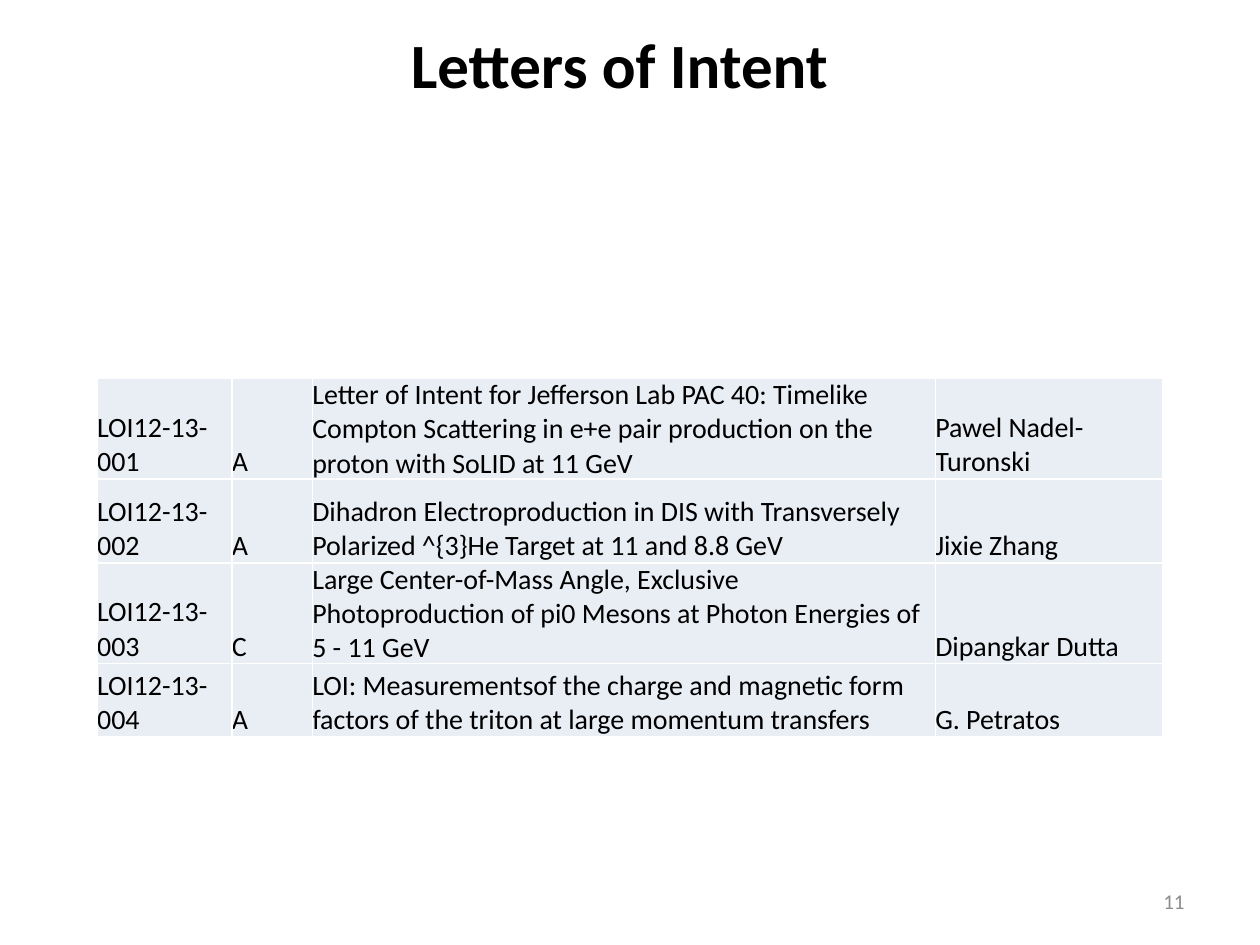
import pptx
import pptx.dml.color
import pptx.enum.text
import pptx.oxml
import pptx.oxml.ns
import pptx.util

Pt = pptx.util.Pt
Align = pptx.enum.text.PP_ALIGN
Anchor = pptx.enum.text.MSO_ANCHOR

COLORS = {"text": "000000", "number": "8C8C8C", "cell": "E9EDF4", "border": "FFFFFF"}

COLUMN_WIDTHS = [77, 46, 356, 130]
ROW_HEIGHTS = [49, 48, 38, 42]
LETTERS = [
    ("LOI12-13-001", "A",
     "Letter of Intent for Jefferson Lab PAC 40: Timelike Compton Scattering in e+e "
     "pair production on the proton with SoLID at 11 GeV", "Pawel Nadel-Turonski"),
    ("LOI12-13-002", "A",
     "Dihadron Electroproduction in DIS with Transversely Polarized ^{3}He Target "
     "at 11 and 8.8 GeV", "Jixie Zhang"),
    ("LOI12-13-003", "C",
     "Large Center-of-Mass Angle, Exclusive Photoproduction of pi0 Mesons at Photon "
     "Energies of 5 - 11 GeV", "Dipangkar Dutta"),
    ("LOI12-13-004", "A",
     "LOI: Measurementsof the charge and magnetic form factors of the triton at "
     "large momentum transfers", "G. Petratos"),
]


class SlideBuilder:
    """Draws styled elements on the current slide."""

    def __init__(self, slide, font_name="Calibri"):
        self.slide = slide
        self.font_name = font_name

    def color(self, name):
        return pptx.dml.color.RGBColor.from_string(COLORS[name])

    def format_text(self, text_frame, size, color="text", bold=False, align=Align.LEFT):
        for paragraph in text_frame.paragraphs:
            paragraph.alignment = align
            for run in paragraph.runs:
                run.font.name = self.font_name
                run.font.size = Pt(size)
                run.font.bold = bold
                run.font.color.rgb = self.color(color)

    def text(self, text, left, top, width, height, size, **style):
        shape = self.slide.shapes.add_textbox(Pt(left), Pt(top), Pt(width), Pt(height))
        text_frame = shape.text_frame
        text_frame.word_wrap = True
        text_frame.vertical_anchor = Anchor.MIDDLE
        text_frame.text = text
        self.format_text(text_frame, size, **style)

    def borders(self, cell, width):
        properties = cell._tc.get_or_add_tcPr()
        for position, side in enumerate(("lnL", "lnR", "lnT", "lnB")):
            line = pptx.oxml.parse_xml(
                f'<a:{side} {pptx.oxml.ns.nsdecls("a")} w="{Pt(width)}"><a:solidFill>'
                f'<a:srgbClr val="{COLORS["border"]}"/></a:solidFill></a:{side}>')
            properties.insert(position, line)

    def table(self, rows, left, top, widths, heights, size):
        shape = self.slide.shapes.add_table(
            len(rows), len(widths), Pt(left), Pt(top), Pt(sum(widths)), Pt(sum(heights)))
        table = shape.table
        table.first_row = False
        table.horz_banding = False
        for column, width in zip(table.columns, widths):
            column.width = Pt(width)
        for row, height, values in zip(table.rows, heights, rows):
            row.height = Pt(height)
            for cell, value in zip(row.cells, values):
                cell.text_frame.text = value
                cell.vertical_anchor = Anchor.BOTTOM
                cell.margin_left = cell.margin_right = 0
                cell.margin_top = cell.margin_bottom = 0
                cell.fill.solid()
                cell.fill.fore_color.rgb = self.color("cell")
                self.borders(cell, 1)
                self.format_text(cell.text_frame, size)


def main():
    presentation = pptx.Presentation()
    presentation.slide_width = Pt(720)
    presentation.slide_height = Pt(540)
    builder = SlideBuilder(presentation.slides.add_slide(presentation.slide_layouts[6]))
    builder.text("Letters of Intent", 30, 0, 648, 72, 36, bold=True, align=Align.CENTER)
    builder.text("11", 516, 500.5, 168, 28.75, 12, color="number", align=Align.RIGHT)
    builder.table(LETTERS, 55.5, 216, COLUMN_WIDTHS, ROW_HEIGHTS, 16)
    presentation.save("out.pptx")


if __name__ == "__main__":
    main()
